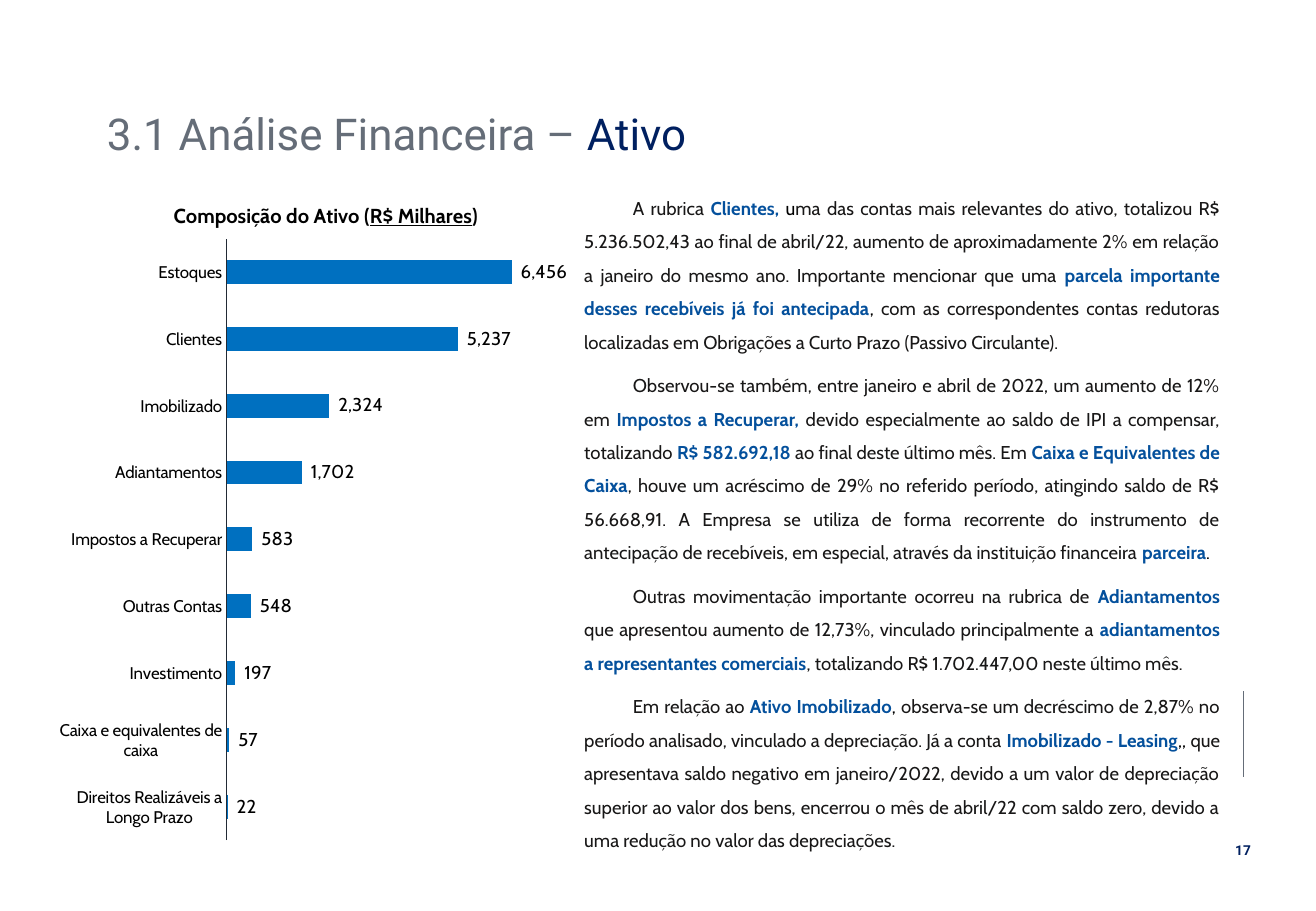
from lxml import etree
from pptx import Presentation
from pptx.chart.data import CategoryChartData
from pptx.dml.color import RGBColor
from pptx.enum.chart import XL_CHART_TYPE as ChartType, XL_LABEL_POSITION as LabelPosition
from pptx.enum.chart import XL_TICK_LABEL_POSITION as TickLabels, XL_TICK_MARK as TickMark
from pptx.enum.shapes import MSO_CONNECTOR as Connector
from pptx.enum.text import MSO_ANCHOR as Anchor, MSO_AUTO_SIZE as AutoSize, PP_ALIGN as Align
from pptx.oxml import parse_xml
from pptx.oxml.ns import nsdecls, qn
from pptx.util import Inches, Pt

NAVY = RGBColor(0x00, 0x20, 0x60)
ACCENT = RGBColor(0x04, 0x50, 0x9C)
GREY = RGBColor(0x65, 0x6D, 0x78)
INK = RGBColor(0x18, 0x17, 0x17)
BLACK = RGBColor(0x00, 0x00, 0x00)
BAR = RGBColor(0x00, 0x70, 0xC0)
AXIS = RGBColor(0x22, 0x2A, 0x35)
THOUSANDS = '_-* #,##0_-;\\-* #,##0_-;_-* "-"??_-;_-@_'

ASSETS = {
    "Direitos Realizáveis a Longo Prazo": 22,
    "Caixa e equivalentes de caixa": 57,
    "Investimento": 197,
    "Outras Contas": 548,
    "Impostos a Recuperar": 583,
    "Adiantamentos": 1702,
    "Imobilizado": 2324,
    "Clientes": 5237,
    "Estoques": 6456,
}

ANALYSIS = [
    [("A rubrica ", INK), ("Clientes, ", ACCENT), ("u", BLACK),
     ("ma das contas mais relevantes do ativo, totalizou R$ 5.236.502,43 ao final de abril/22, "
      "aumento de aproximadamente 2% em relação a janeiro do mesmo ano. Importante mencionar "
      "que uma ", INK),
     ("parcela importante desses recebíveis já foi antecipada", ACCENT), (", ", BLACK),
     ("com as correspondentes contas redutoras localizadas em Obrigações a Curto Prazo "
      "(Passivo Circulante).", INK)],
    [("Observou-se também, entre janeiro e abril de 2022, um aumento de 12% em ", INK),
     ("Impostos a Recuperar, ", ACCENT),
     ("devido especialmente ao saldo de IPI a compensar, totalizando", INK),
     (" R$ 582.692,18", ACCENT), (" ao final deste último mês. Em ", INK),
     ("Caixa e Equivalentes de Caixa", ACCENT),
     (", houve um acréscimo de 29% no referido período, atingindo saldo de R$ 56.668,91. "
      "A Empresa se utiliza de forma recorrente do instrumento de antecipação de recebíveis, "
      "em especial, através da instituição financeira ", INK),
     ("parceira", ACCENT), (".", BLACK)],
    [("Outras movimentação importante ocorreu na rubrica de ", INK), ("Adiantamentos ", ACCENT),
     ("que apresentou aumento de 12,73%, vinculado principalmente a ", INK),
     ("adiantamentos a representantes comerciais", ACCENT),
     (", totalizando R$ 1.702.447,00 neste último mês.", INK)],
    [("Em relação ao ", INK), ("Ativo Imobilizado", ACCENT), (", ", BLACK),
     ("observa-se um decréscimo de 2,87% no período analisado, vinculado a depreciação. "
      "Já a conta ", INK),
     ("Imobilizado - Leasing", ACCENT), (",, ", BLACK),
     ("que apresentava saldo negativo em janeiro/2022, devido a um valor de depreciação "
      "superior ao valor dos bens, encerrou o mês de abril/22 com saldo zero, devido a uma "
      "redução no valor das depreciações.", INK)],
]


def style(font, size, color, name="Cabin", bold=False, underline=False):
    font.name, font.size, font.bold = name, Pt(size), bold
    font.underline = underline
    font.color.rgb = color


def add_span(para, text, **form):
    span = para.add_run()
    span.text = text
    style(span.font, **form)


def manual_layout(x, y, w=None, h=None):
    target = '<c:layoutTarget val="inner"/>' if w else ""
    modes = '<c:xMode val="edge"/><c:yMode val="edge"/>'
    sizes = {"x": x, "y": y, "w": w, "h": h}
    parts = "".join(f'<c:{key} val="{size}"/>' for key, size in sizes.items() if size)
    return parse_xml(f'<c:layout {nsdecls("c")}><c:manualLayout>{target}{modes}{parts}'
                     '</c:manualLayout></c:layout>')


class ReportPage:
    """Places the elements of one report page in its house style."""

    def __init__(self, deck):
        self.page = deck.slides.add_slide(deck.slide_layouts[5])
        self.shapes = self.page.shapes

    def title(self, spans, left, top, width, height):
        box = self.shapes.title
        box.left, box.top, box.width, box.height = map(Inches, (left, top, width, height))
        frame = box.text_frame
        frame.word_wrap, frame.auto_size = True, AutoSize.NONE
        frame.vertical_anchor = Anchor.MIDDLE
        para = frame.paragraphs[0]
        para.alignment, para.line_spacing = Align.LEFT, 0.9
        for text, color in spans:
            add_span(para, text, size=26, color=color, name="Roboto")

    def rule(self, x, top, bottom):
        line = self.shapes.add_connector(
            Connector.STRAIGHT, Inches(x), Inches(top), Inches(x), Inches(bottom))
        line.line.color.rgb, line.line.width = GREY, Pt(0.5)
        etree.SubElement(line._element.spPr, qn("a:effectLst"))

    def text_box(self, left, top, width, height, wrap=True):
        box = self.shapes.add_textbox(*map(Inches, (left, top, width, height)))
        box.text_frame.word_wrap = wrap
        box.text_frame.auto_size = AutoSize.SHAPE_TO_FIT_TEXT
        return box.text_frame

    def page_number(self, number, *place):
        para = self.text_box(*place, wrap=False).paragraphs[0]
        para.alignment = Align.CENTER
        add_span(para, number, size=8.1, color=NAVY, name="Roboto", bold=True)

    def body(self, paragraphs, *place):
        frame = self.text_box(*place)
        for index, spans in enumerate(paragraphs):
            para = frame.add_paragraph() if index else frame.paragraphs[0]
            para.alignment, para.line_spacing = Align.JUSTIFY, 1.5
            para.space_after = Pt(6)
            para._p.get_or_add_pPr().set("indent", str(Inches(0.4)))
            for text, color in spans:
                add_span(para, text, size=11, color=color, bold=color == ACCENT)

    def bar_chart(self, values, heading, *place):
        data = CategoryChartData(number_format=THOUSANDS)
        data.categories = list(values)
        data.add_series("Series 1", list(values.values()))
        chart = self.shapes.add_chart(
            ChartType.BAR_CLUSTERED, *map(Inches, place), data).chart
        style(chart.font, 11, BLACK)
        chart.has_legend = False
        chart.has_title = True
        para = chart.chart_title.text_frame.paragraphs[0]
        for text, underline in heading:
            add_span(para, text, size=12, color=BLACK, bold=True, underline=underline)
        chart.chart_title.include_in_layout = False
        title = chart.chart_title._element
        for layout in title.findall(qn("c:layout")):
            title.remove(layout)
        title.find(qn("c:tx")).addnext(manual_layout(0.22, 0.04))
        area = chart._chartSpace.chart.plotArea
        for layout in area.findall(qn("c:layout")):
            area.remove(layout)
        area.insert(0, manual_layout(0.325, 0.098, 0.653, 0.86))

        names = chart.category_axis
        names.major_tick_mark = names.minor_tick_mark = TickMark.NONE
        names.tick_label_position = TickLabels.NEXT_TO_AXIS
        names.has_major_gridlines = False
        names.format.line.color.rgb, names.format.line.width = AXIS, Pt(0.75)
        style(names.tick_labels.font, 10, BLACK)
        amounts = chart.value_axis
        amounts.minimum_scale, amounts.maximum_scale = 0, 8000
        amounts.has_major_gridlines = amounts.visible = False

        plot = chart.plots[0]
        plot.gap_width, plot.vary_by_categories = 182, False
        series = plot.series[0]
        series.format.fill.solid()
        series.format.fill.fore_color.rgb = BAR
        labels = series.data_labels
        labels.show_value, labels.position = True, LabelPosition.OUTSIDE_END
        labels.number_format, labels.number_format_is_linked = THOUSANDS, False
        style(labels.font, 11, BLACK)


def main():
    deck = Presentation()
    deck.slide_width, deck.slide_height = Inches(10.83), Inches(7.5)
    report = ReportPage(deck)
    report.title([("3.1 Análise Financeira – ", GREY), ("Ativo", NAVY)], 0.78, 0.86, 8.18, 0.53)
    report.rule(10.23, 5.69, 6.4)
    report.page_number("17", 10.06, 6.88, 0.34, 0.24)
    heading = [("Composição do Ativo (", False), ("R$ Milhares", True), (")", False)]
    report.bar_chart(ASSETS, heading, 0.42, 1.4, 4.45, 5.76)
    report.body(ANALYSIS, 4.71, 1.48, 5.43, 5.6)
    deck.save("out.pptx")


if __name__ == "__main__":
    main()
